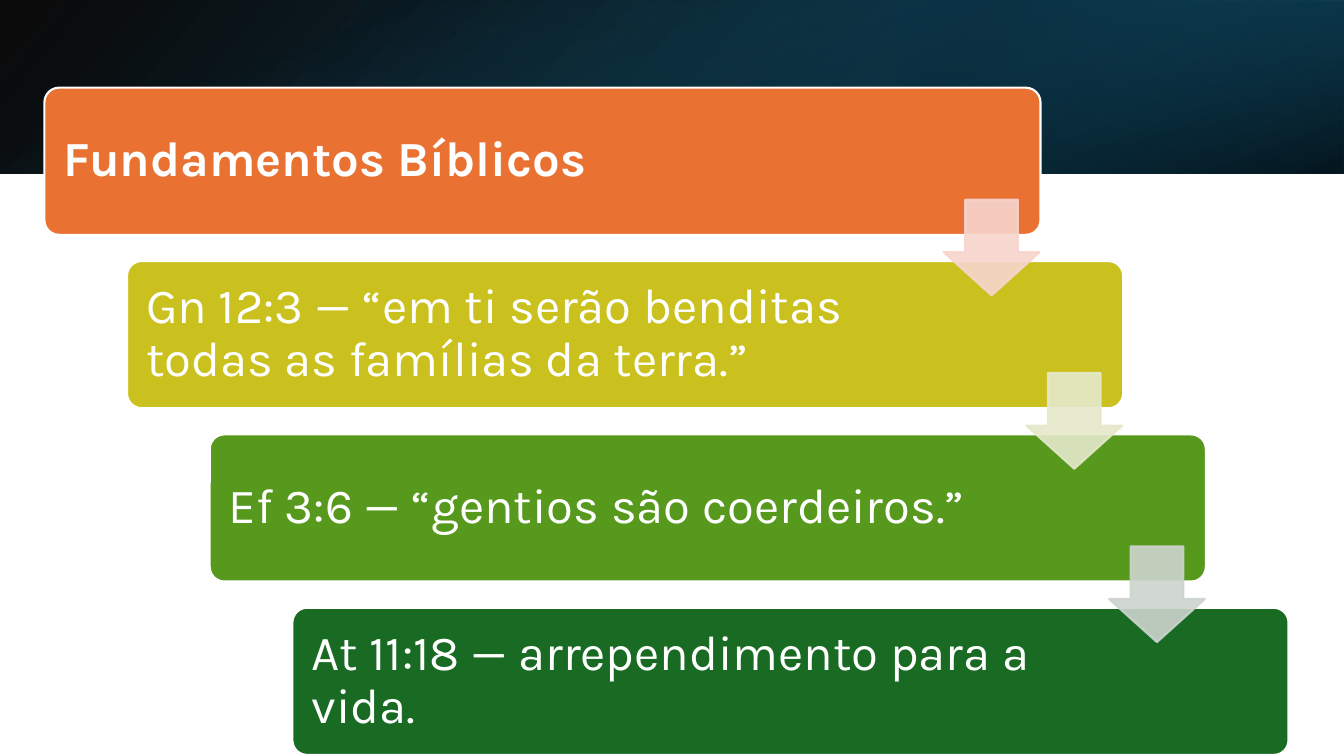
from pptx import Presentation
from pptx.dml.color import RGBColor
from pptx.enum import shapes, text
from pptx.oxml import ns
from pptx.util import Inches, Pt

STEP_X, STEP_Y = 0.82, 1.72
STEPS = [
    ("Fundamentos Bíblicos", "E97132", 8.18, True),
    ("Gn 12:3 — “em ti serão benditas todas as famílias da terra.”", "CBC11E", 8.02, False),
    ("Ef 3:6 — “gentios são coerdeiros.”", "56991D", 8.02, False),
    ("At 11:18 — arrependimento para a vida.", "196B24", 8.02, False),
]
ARROW_COLORS = ["F7D5CE", "E5E8CA", "CCD4CD"]


def rgb(value):
    return RGBColor.from_string(value)


def set_opacity(s, percents):
    colors = s._element.spPr.iter(ns.qn("a:srgbClr"))
    for color, percent in zip(colors, percents):
        alpha = color.makeelement(ns.qn("a:alpha"), {"val": str(percent * 1000)})
        color.append(alpha)


def add_shape(slide, kind, box, adjustments=()):
    s = slide.shapes.add_shape(kind, *[Inches(v) for v in box])
    s.shadow.inherit = False
    for i, value in enumerate(adjustments):
        s.adjustments[i] = value
    return s


def add_solid(slide, kind, box, color, line, adjustments):
    s = add_shape(slide, kind, box, adjustments)
    s.fill.solid()
    s.fill.fore_color.rgb = rgb(color)
    s.line.color.rgb = rgb(line)
    s.line.width = Pt(1.5)
    return s


def add_gradient(slide, box, stops, angle, rotation=0, flip=False):
    s = add_shape(slide, shapes.MSO_SHAPE.RECTANGLE, box)
    s.rotation = rotation
    if flip:
        s._element.spPr.xfrm.set("flipH", "1")
    s.line.fill.background()
    s.fill.gradient()
    s.fill.gradient_angle = 360 - angle
    for stop, (position, color, _) in zip(s.fill.gradient_stops, stops):
        stop.position = position
        stop.color.rgb = rgb(color)
    set_opacity(s, [opacity for _, _, opacity in stops])


def add_text(slide, content, box, size=35, color="FFFFFF", bold=False, font="Karla"):
    tf = slide.shapes.add_textbox(*[Inches(v) for v in box]).text_frame
    tf.word_wrap = True
    tf.vertical_anchor = text.MSO_ANCHOR.MIDDLE
    tf.margin_left = tf.margin_right = tf.margin_top = tf.margin_bottom = Inches(0.15)
    p = tf.paragraphs[0]
    p.line_spacing = 0.9
    r = p.add_run()
    r.text = content
    r.font.name = font
    r.font.size = Pt(size)
    r.font.bold = bold
    r.font.color.rgb = rgb(color)


def add_header(slide):
    add_gradient(slide, (0, 0, 13.33, 1.72),
                 [(0, "000000", 96), (1, "104862", 100)], 140, flip=True)
    add_gradient(slide, (8.89, 0, 4.44, 1.72),
                 [(0.19, "0B3041", 68), (1, "156082", 79)], 320, rotation=180, flip=True)
    add_gradient(slide, (5.8, -5.8, 1.72, 13.33),
                 [(0.23, "156082", 0), (0.99, "000000", 74)], 340, rotation=90)


def main():
    prs = Presentation()
    prs.slide_width, prs.slide_height = Inches(13.33), Inches(7.5)
    slide = prs.slides.add_slide(prs.slide_layouts[6])
    add_header(slide)
    for i, (content, color, width, bold) in enumerate(STEPS):
        x, y = 0.44 + i * STEP_X, 0.87 + i * STEP_Y
        add_solid(slide, shapes.MSO_SHAPE.ROUNDED_RECTANGLE, (x, y, 9.88, 1.46),
                  color, "FFFFFF", [0.1])
        add_text(slide, content, (x + 0.04, y + 0.04, width, 1.37), bold=bold)
    for i, color in enumerate(ARROW_COLORS):
        s = add_solid(slide, shapes.MSO_SHAPE.DOWN_ARROW,
                      (9.36 + i * STEP_X, 1.98 + i * STEP_Y, 0.95, 0.95),
                      color, color, [0.55, 0.45])
        set_opacity(s, [90, 90])
    prs.save("out.pptx")


if __name__ == "__main__":
    main()
